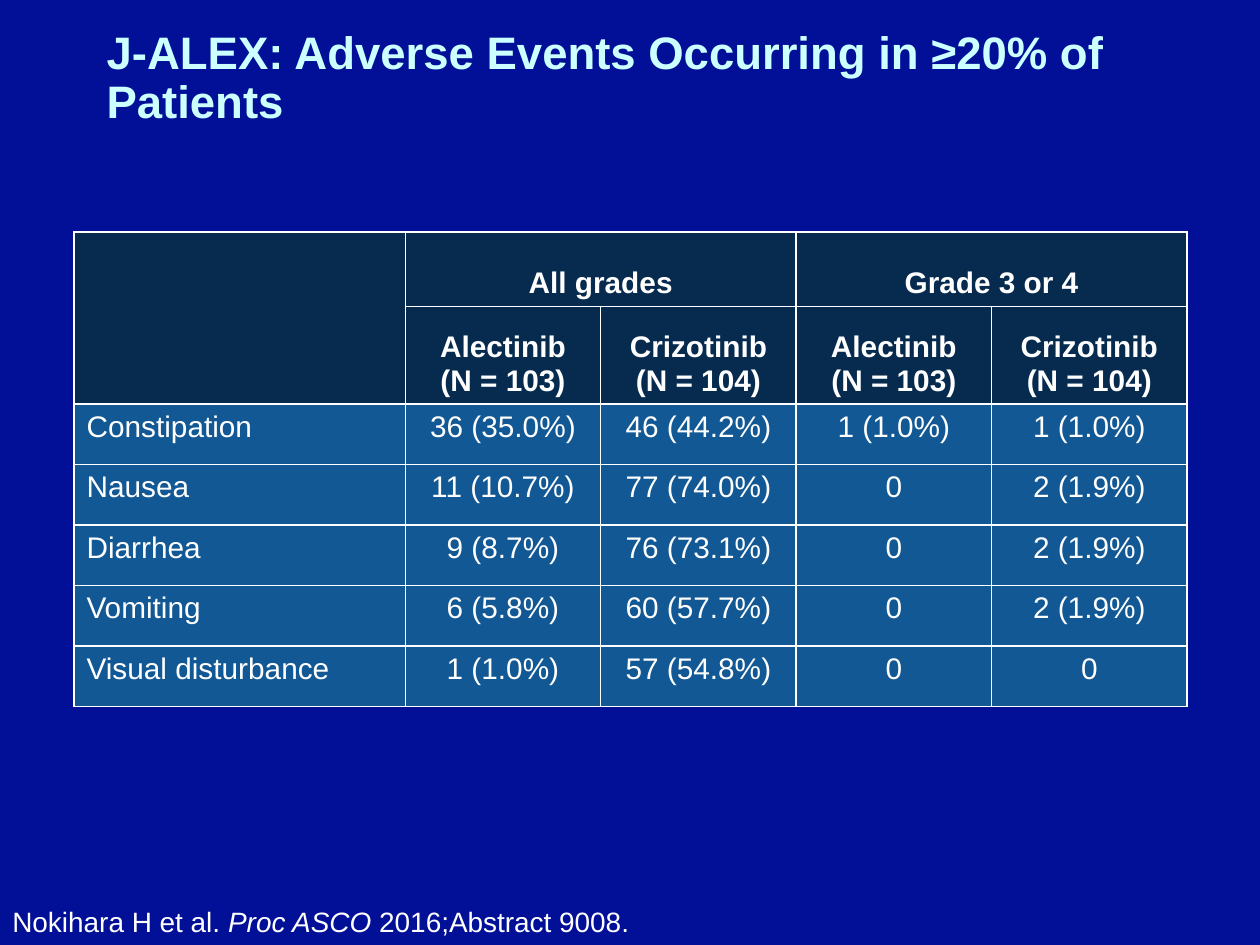
from lxml.etree import SubElement
from pptx import Presentation
from pptx.dml.color import RGBColor
from pptx.enum.text import MSO_ANCHOR, PP_ALIGN
from pptx.oxml.ns import qn
from pptx.util import Cm, Pt

NAVY = RGBColor(0x01, 0x10, 0x97)
PALE_CYAN = RGBColor(0xCC, 0xFF, 0xFF)
WHITE = RGBColor(0xFF, 0xFF, 0xFF)
HEADER_BLUE = RGBColor(0x07, 0x2B, 0x4F)
BODY_BLUE = RGBColor(0x12, 0x58, 0x94)

HEADINGS = [
    ["", "All grades", "", "Grade 3 or 4", ""],
    [""] + ["Alectinib\n(N = 103)", "Crizotinib\n(N = 104)"] * 2,
]
EVENTS = [
    ["Constipation", "36 (35.0%)", "46 (44.2%)", "1 (1.0%)", "1 (1.0%)"],
    ["Nausea", "11 (10.7%)", "77 (74.0%)", "0", "2 (1.9%)"],
    ["Diarrhea", "9 (8.7%)", "76 (73.1%)", "0", "2 (1.9%)"],
    ["Vomiting", "6 (5.8%)", "60 (57.7%)", "0", "2 (1.9%)"],
    ["Visual disturbance", "1 (1.0%)", "57 (54.8%)", "0", "0"],
]
MERGES = [((0, 0), (1, 0)), ((0, 1), (0, 2)), ((0, 3), (0, 4))]
COLUMN_WIDTHS = [6.68] + [3.94] * 4
ROW_HEIGHTS = [1.5, 1.96] + [1.22] * 5


def format_font(font, color, **values):
    """Apply Arial, a colour and further format values to a font."""
    font.color.rgb = color
    for name, value in {"name": "Arial", **values}.items():
        setattr(font, name, value)


def add_text(slide, box, pieces, color, size, anchor, bold=False, spacing=1.0):
    """Add a one-paragraph text box from (text, italic) pieces."""
    frame = slide.shapes.add_textbox(*map(Cm, box)).text_frame
    frame.word_wrap = True
    frame.vertical_anchor = anchor
    paragraph = frame.paragraphs[0]
    paragraph.line_spacing = spacing
    for text, italic in pieces:
        run = paragraph.add_run()
        run.text = text
        format_font(run.font, color, size=Pt(size), bold=bold, italic=italic)


def add_borders(cell):
    """Draw a thin white line on each side of a cell."""
    properties = cell._tc.get_or_add_tcPr()
    for position, side in enumerate(("a:lnL", "a:lnR", "a:lnT", "a:lnB")):
        line = SubElement(properties, qn(side), w=str(Pt(1)))
        fill = SubElement(line, qn("a:solidFill"))
        SubElement(fill, qn("a:srgbClr"), val=str(WHITE))
        properties.remove(line)
        properties.insert(position, line)


def fill_cell(cell, text, is_heading, is_label):
    """Write and format one table cell."""
    cell.fill.solid()
    cell.fill.fore_color.rgb = HEADER_BLUE if is_heading else BODY_BLUE
    cell.vertical_anchor = MSO_ANCHOR.BOTTOM if is_heading else MSO_ANCHOR.TOP
    paragraph = cell.text_frame.paragraphs[0]
    paragraph.text = text
    paragraph.alignment = PP_ALIGN.LEFT if is_label else PP_ALIGN.CENTER
    for run in paragraph.runs:
        format_font(run.font, WHITE, size=Pt(17), bold=is_heading)
    add_borders(cell)


def add_events_table(slide):
    """Add the adverse event table with its two heading rows."""
    rows = HEADINGS + EVENTS
    table = slide.shapes.add_table(
        len(rows), len(COLUMN_WIDTHS), Cm(1.49), Cm(4.68),
        Cm(sum(COLUMN_WIDTHS)), Cm(sum(ROW_HEIGHTS))).table
    for column, width in zip(table.columns, COLUMN_WIDTHS):
        column.width = Cm(width)
    for row, height in zip(table.rows, ROW_HEIGHTS):
        row.height = Cm(height)
    for r, texts in enumerate(rows):
        for c, text in enumerate(texts):
            fill_cell(table.cell(r, c), text, r < len(HEADINGS), c == 0)
    for first, last in MERGES:
        table.cell(*first).merge(table.cell(*last))


def main():
    """Build and save the slide."""
    deck = Presentation()
    deck.slide_width, deck.slide_height = Cm(25.4), Cm(19.05)
    slide = deck.slides.add_slide(deck.slide_layouts[6])
    slide.background.fill.solid()
    slide.background.fill.fore_color.rgb = NAVY
    citation = [("Nokihara H et al. ", False), ("Proc ASCO ", True),
                ("2016;Abstract 9008.", False)]
    add_text(slide, (0, 18.11, 24.84, 0.94), citation, WHITE, 16, MSO_ANCHOR.TOP)
    title = [("J-ALEX: Adverse Events Occurring in ≥20% of Patients", False)]
    add_text(slide, (1.9, 0, 21.6, 3.18), title, PALE_CYAN, 26,
             MSO_ANCHOR.MIDDLE, bold=True, spacing=0.9)
    add_events_table(slide)
    deck.save("out.pptx")


if __name__ == "__main__":
    main()
